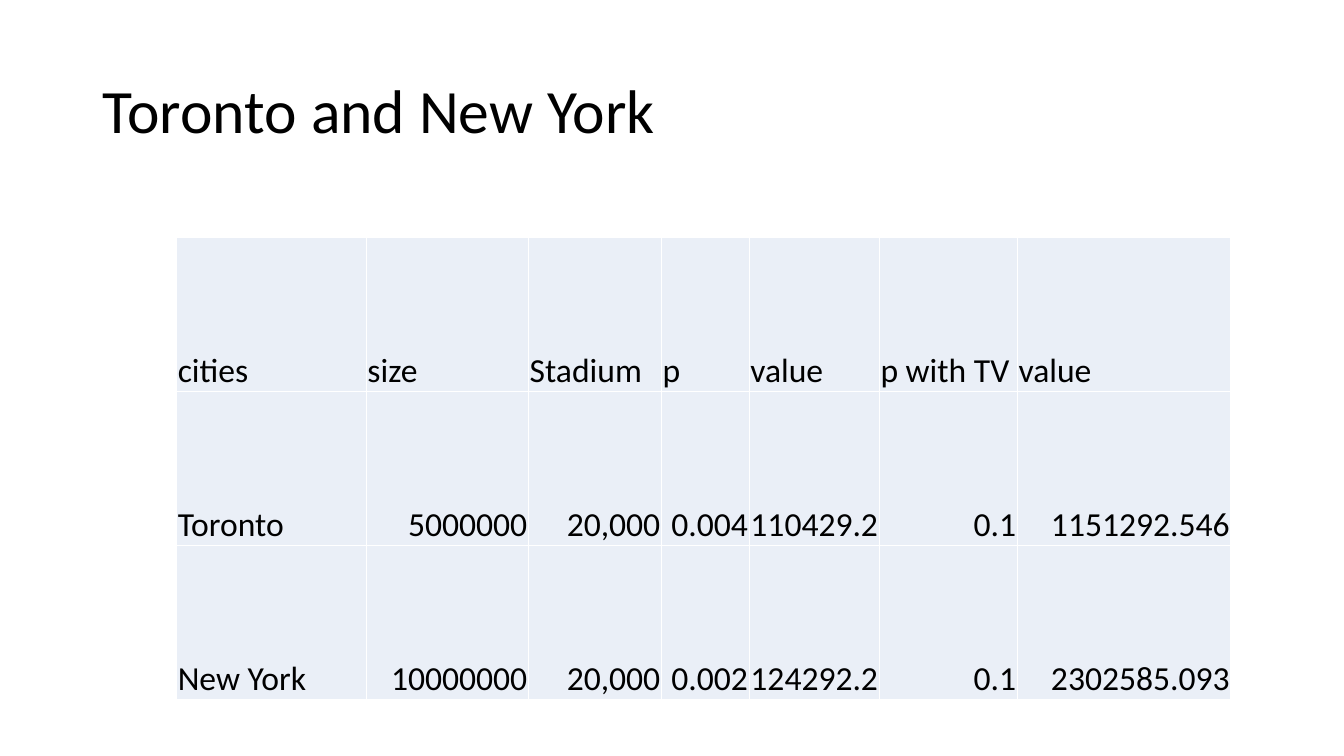
from dataclasses import dataclass

from lxml import etree
from pptx import Presentation
from pptx import util as u
from pptx.dml.color import RGBColor
from pptx.enum import text
from pptx.oxml import ns

FONT = "Calibri"
BLACK, WHITE, PALE_BLUE = "000000", "FFFFFF", "EAEFF7"
ROW_HEIGHT = 3.89


@dataclass(frozen=True)
class Column:
    heading: str
    width: float
    values: tuple[str, str]
    numeric: bool = True


COLUMNS = (
    Column("cities", 4.78, ("Toronto", "New York"), numeric=False),
    Column("size", 4.09, ("5000000", "10000000")),
    Column("Stadium", 3.35, ("20,000", "20,000")),
    Column("p", 2.21, ("0.004", "0.002")),
    Column("value", 3.28, ("110429.2", "124292.2")),
    Column("p with TV", 3.48, ("0.1", "0.1")),
    Column("value", 5.38, ("1151292.546", "2302585.093")),
)


def color(code: str) -> RGBColor:
    return RGBColor.from_string(code)


def format_paragraph(para, size: float, align) -> None:
    para.alignment = align
    para.font.name = FONT
    para.font.size = u.Pt(size)
    para.font.color.rgb = color(BLACK)


def add_borders(cell, code: str, points: float) -> None:
    properties = cell._tc.get_or_add_tcPr()
    for side in ("a:lnL", "a:lnR", "a:lnT", "a:lnB"):
        line = etree.SubElement(properties, ns.qn(side), w=str(u.Pt(points)))
        fill = etree.SubElement(line, ns.qn("a:solidFill"))
        etree.SubElement(fill, ns.qn("a:srgbClr"), val=code)


def fill_cell(cell, content: str, align) -> None:
    add_borders(cell, WHITE, 1)
    cell.fill.solid()
    cell.fill.fore_color.rgb = color(PALE_BLUE)
    cell.margin_left = cell.margin_right = cell.margin_top = u.Cm(0.03)
    cell.margin_bottom = u.Cm(0)
    cell.vertical_anchor = text.MSO_ANCHOR.BOTTOM
    cell.text = content
    format_paragraph(cell.text_frame.paragraphs[0], 24, align)


def add_title(page, content: str) -> None:
    title = page.shapes.title
    title.left, title.top = u.Cm(2.34), u.Cm(1.02)
    title.width, title.height = u.Cm(29.21), u.Cm(3.68)
    title.text = content
    title.text_frame.vertical_anchor = text.MSO_ANCHOR.MIDDLE
    para = title.text_frame.paragraphs[0]
    format_paragraph(para, 44, text.PP_ALIGN.LEFT)
    para.line_spacing = 0.9


def add_city_table(page, columns: tuple[Column, ...]) -> None:
    row_count = 1 + len(columns[0].values)
    width = sum(column.width for column in columns)
    table = page.shapes.add_table(
        row_count, len(columns), u.Cm(4.45), u.Cm(5.97),
        u.Cm(width), u.Cm(ROW_HEIGHT * row_count),
    ).table
    for row in table.rows:
        row.height = u.Cm(ROW_HEIGHT)
    table.first_row = table.horz_banding = False
    for index, column in enumerate(columns):
        table.columns[index].width = u.Cm(column.width)
        fill_cell(table.cell(0, index), column.heading, text.PP_ALIGN.LEFT)
        align = text.PP_ALIGN.RIGHT if column.numeric else text.PP_ALIGN.LEFT
        for row_index, value in enumerate(column.values, start=1):
            fill_cell(table.cell(row_index, index), value, align)


def main() -> None:
    deck = Presentation()
    deck.slide_width, deck.slide_height = u.Cm(33.87), u.Cm(19.05)
    page = deck.slides.add_slide(deck.slide_layouts.get_by_name("Title Only"))
    add_title(page, "Toronto and New York")
    add_city_table(page, COLUMNS)
    deck.save("out.pptx")


if __name__ == "__main__":
    main()
